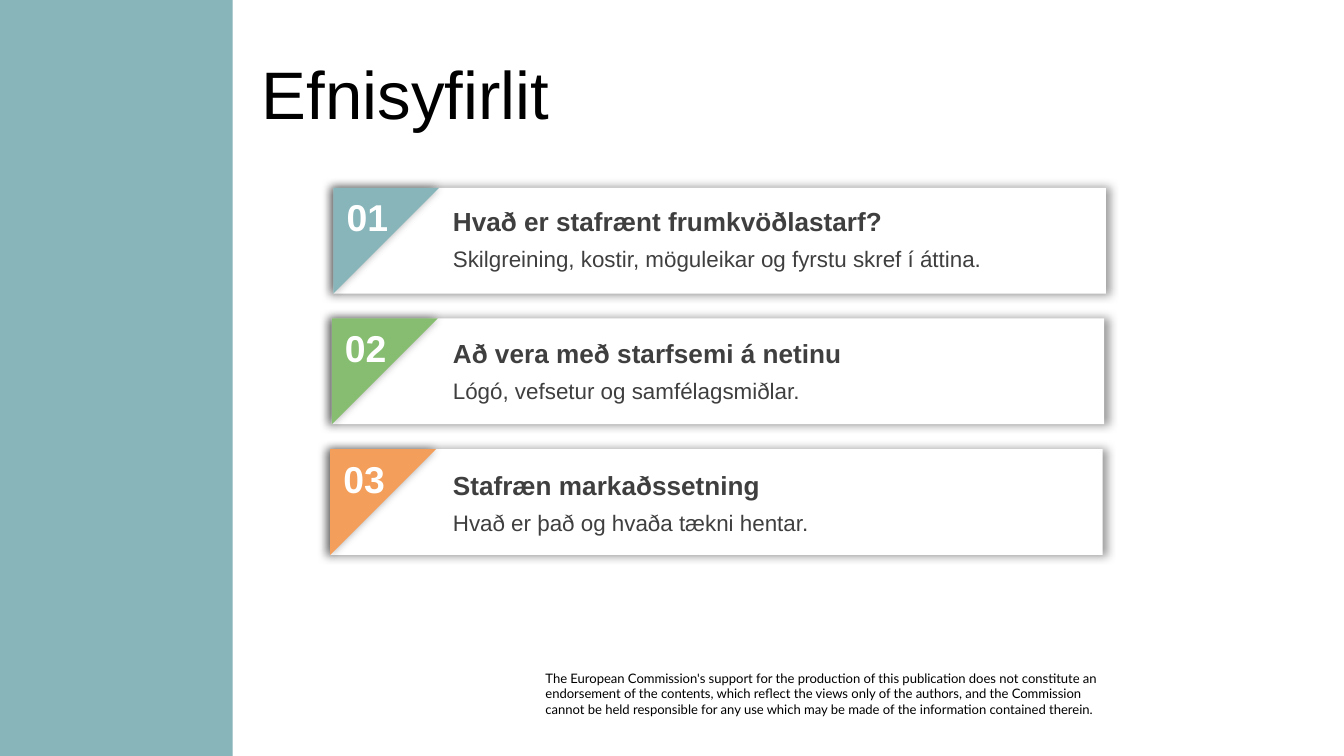
from dataclasses import dataclass

import pptx
import pptx.dml.color
import pptx.enum.shapes
import pptx.enum.text
import pptx.oxml
import pptx.oxml.ns
import pptx.util
from pptx.util import Cm

SHAPES = pptx.enum.shapes.MSO_SHAPE
ANCHOR = pptx.enum.text.MSO_ANCHOR


@dataclass(frozen=True)
class Theme:
    teal: str = "87B5BA"
    green: str = "86BD70"
    orange: str = "F39E5A"
    white: str = "FFFFFF"
    black: str = "000000"
    gray: str = "3F3F3F"
    font: str = "Arial"
    small_font: str = "Lato"
    title: int = 36
    number: int = 20
    heading: int = 14
    body: int = 12
    disclaimer: int = 7


THEME = Theme()

ENTRIES = [
    ("Hvað er stafrænt frumkvöðlastarf?",
     "Skilgreining, kostir, möguleikar og fyrstu skref í áttina.", THEME.teal),
    ("Að vera með starfsemi á netinu",
     "Lógó, vefsetur og samfélagsmiðlar.", THEME.green),
    ("Stafræn markaðssetning",
     "Hvað er það og hvaða tækni hentar.", THEME.orange),
]
DISCLAIMER = [
    "The European Commission's support for the production of this publication "
    "does not constitute an endorsement of the contents, which reflect the "
    "views only of the authors, and the Commission",
    "cannot be held responsible for any use which may be made of the "
    "information contained therein.",
]

CARD_LEFT, CARD_TOP, CARD_WIDTH, CARD_HEIGHT = 6.3, 3.55, 14.6, 2.0
CARD_STEP_X, CARD_STEP_Y = -0.03, 2.47
TEXT_LEFT, TEXT_TOP, TEXT_WIDTH, TEXT_STEP_Y = 8.31, 3.76, 12.2, 2.49
BODY_OFFSET = 0.75


class SlideBuilder:
    def __init__(self, slide, theme):
        self.slide = slide
        self.theme = theme

    def shape(self, kind, left, top, width, height, color, rotation=0):
        shape = self.slide.shapes.add_shape(
            kind, Cm(left), Cm(top), Cm(width), Cm(height))
        shape.shadow.inherit = False
        shape.fill.solid()
        shape.fill.fore_color.rgb = pptx.dml.color.RGBColor.from_string(color)
        shape.line.fill.background()
        shape.rotation = rotation
        return shape

    def glow_shadow(self, shape):
        """Give the shape a soft shadow on all sides."""
        effects = shape._element.spPr.find(pptx.oxml.ns.qn("a:effectLst"))
        effects.append(pptx.oxml.parse_xml(
            f'<a:outerShdw {pptx.oxml.ns.nsdecls("a")} blurRad="63500" '
            'sx="101000" sy="101000" algn="ctr" rotWithShape="0">'
            f'<a:srgbClr val="{self.theme.black}"><a:alpha val="40000"/>'
            '</a:srgbClr></a:outerShdw>'))

    def text(self, lines, left, top, width, height, size, color,
             bold=False, font=None, margins=(0.25, 0.13), anchor=ANCHOR.TOP):
        box = self.slide.shapes.add_textbox(
            Cm(left), Cm(top), Cm(width), Cm(height))
        side, edge = map(Cm, margins)
        frame = box.text_frame
        frame_format = {
            "word_wrap": True, "vertical_anchor": anchor,
            "margin_left": side, "margin_right": side,
            "margin_top": edge, "margin_bottom": edge,
        }
        for name, value in frame_format.items():
            setattr(frame, name, value)
        font_format = {"name": font or self.theme.font,
                       "size": pptx.util.Pt(size), "bold": bold}
        for index, line in enumerate(lines):
            paragraph = frame.add_paragraph() if index else frame.paragraphs[0]
            run = paragraph.add_run()
            run.text = line
            for name, value in font_format.items():
                setattr(run.font, name, value)
            run.font.color.rgb = pptx.dml.color.RGBColor.from_string(color)

    def card(self, index, heading, body, color):
        theme = self.theme
        left = CARD_LEFT + index * CARD_STEP_X
        top = CARD_TOP + index * CARD_STEP_Y
        text_top = TEXT_TOP + index * TEXT_STEP_Y
        panel = self.shape(SHAPES.RECTANGLE, left, top,
                           CARD_WIDTH, CARD_HEIGHT, theme.white)
        corner = self.shape(SHAPES.RIGHT_TRIANGLE, left, top,
                            CARD_HEIGHT, CARD_HEIGHT, color, rotation=90)
        for shape in (panel, corner):
            self.glow_shadow(shape)
        self.text([f"{index + 1:02}"], left, top, 1.47, 1.12,
                  theme.number, theme.white, bold=True)
        self.text([heading], TEXT_LEFT, text_top, TEXT_WIDTH, 0.86,
                  theme.heading, theme.gray, bold=True)
        self.text([body], TEXT_LEFT, text_top + BODY_OFFSET, TEXT_WIDTH, 0.76,
                  theme.body, theme.gray)


def main():
    presentation = pptx.Presentation()
    presentation.slide_width = Cm(25.4)
    presentation.slide_height = Cm(14.29)
    slide = presentation.slides.add_slide(presentation.slide_layouts[6])
    builder = SlideBuilder(slide, THEME)

    builder.text(DISCLAIMER, 10.31, 12.67, 10.6, 0.89, THEME.disclaimer,
                 THEME.black, font=THEME.small_font, margins=(0, 0))
    builder.shape(SHAPES.RECTANGLE, 0, 0, 4.4, 14.29, THEME.teal)
    builder.text(["Efnisyfirlit"], 4.7, 0.95, 18.3, 1.6, THEME.title,
                 THEME.black, anchor=ANCHOR.MIDDLE)
    for index, entry in enumerate(ENTRIES):
        builder.card(index, *entry)

    presentation.save("out.pptx")


if __name__ == "__main__":
    main()
